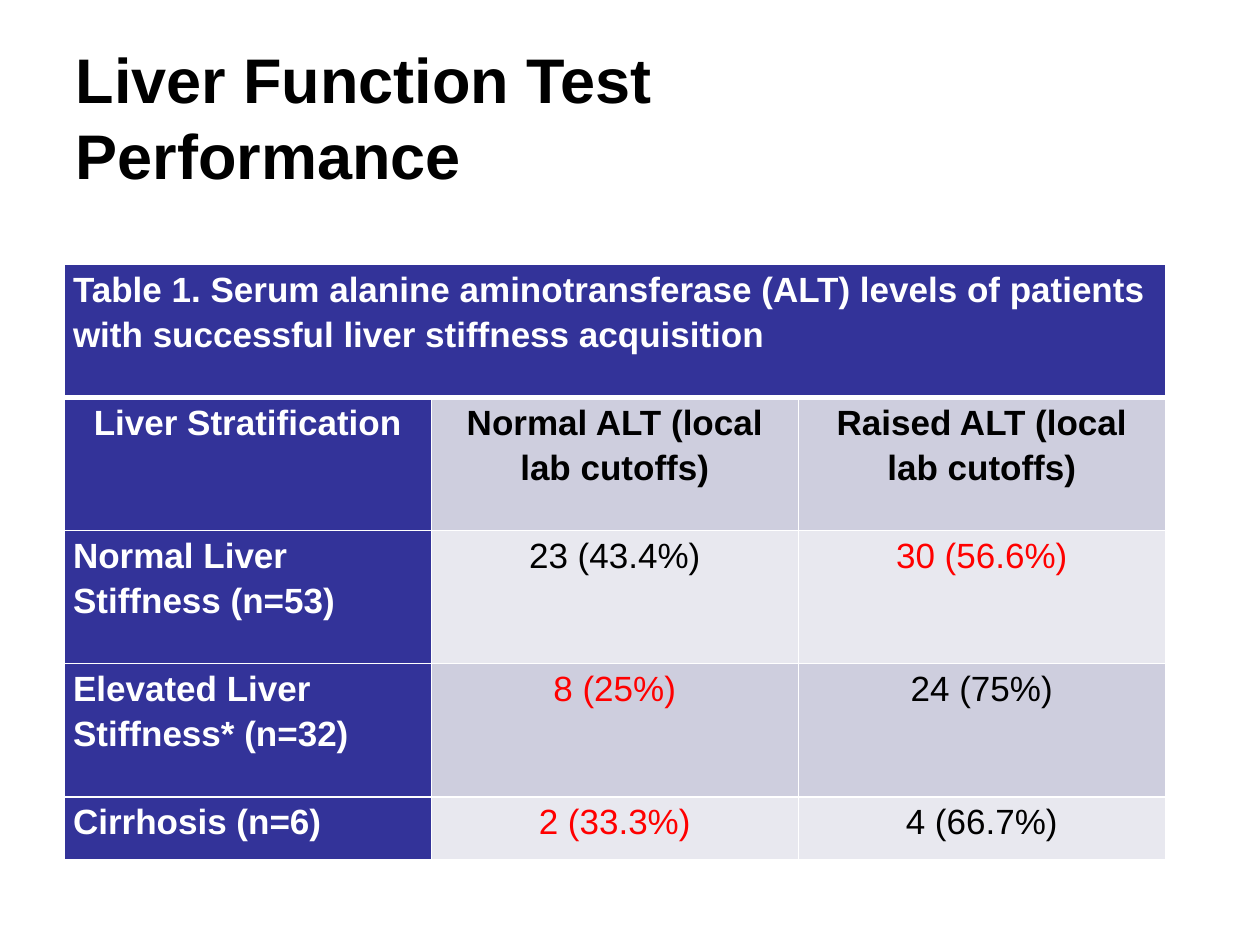
import pptx
import pptx.util
import pptx.dml.color
import pptx.enum.text
import lxml.etree

Inches, Pt = pptx.util.Inches, pptx.util.Pt
PP_ALIGN, MSO_ANCHOR = pptx.enum.text.PP_ALIGN, pptx.enum.text.MSO_ANCHOR
A = "http://schemas.openxmlformats.org/drawingml/2006/main"
WIDTH, HEIGHT = 10, 7.5
ROW_UNITS = [19, 19, 19, 19, 9]
NAVY, WHITE, BLACK, RED = "333399", "FFFFFF", "000000", "FF0000"
BANDS = ["E8E8EF", "CECEDE"]
CAPTION = ("Table 1. Serum alanine aminotransferase (ALT) levels of patients "
           "with successful liver stiffness acquisition")
ROWS = [
    [CAPTION, "", ""],
    ["Liver Stratification", "Normal ALT (local lab cutoffs)", "Raised ALT (local lab cutoffs)"],
    ["Normal Liver Stiffness (n=53)", "23 (43.4%)", "30 (56.6%)"],
    ["Elevated Liver Stiffness* (n=32)", "8 (25%)", "24 (75%)"],
    ["Cirrhosis (n=6)", "2 (33.3%)", "4 (66.7%)"],
]
DISCORDANT = {(2, 2), (3, 1), (4, 1)}


def rgb(color):
    return pptx.dml.color.RGBColor.from_string(color)


def add_run(p, text, size, color, bold):
    r = p.add_run()
    r.text = text
    r.font.name = "Arial"
    r.font.size = Pt(size)
    r.font.bold = bold
    r.font.color.rgb = rgb(color)


def set_borders(cell, widths):
    tc_pr = cell._tc.get_or_add_tcPr()
    for side, width in zip("LRTB", widths):
        ln = lxml.etree.SubElement(tc_pr, f"{{{A}}}ln{side}", w=str(Pt(width)))
        fill = lxml.etree.SubElement(ln, f"{{{A}}}solidFill")
        lxml.etree.SubElement(fill, f"{{{A}}}srgbClr", val=WHITE)


def format_cell(cell, row, col):
    header = row == 0 or col == 0
    set_borders(cell, [1, 1, 3 if row == 1 else 1, 3 if row == 0 else 1])
    cell.fill.solid()
    cell.fill.fore_color.rgb = rgb(NAVY if header else BANDS[row % 2])
    cell.margin_left = cell.margin_right = Inches(0.07)
    cell.margin_top = cell.margin_bottom = 0
    cell.vertical_anchor = MSO_ANCHOR.TOP
    text = ROWS[row][col]
    if not text:
        return
    p = cell.text_frame.paragraphs[0]
    p.alignment = PP_ALIGN.CENTER if row == 1 or col else PP_ALIGN.LEFT
    p.line_spacing = 1.15
    color = WHITE if header else RED if (row, col) in DISCORDANT else BLACK
    add_run(p, text, 20, color, header or row == 1)


def add_title(s, left, top, width, height):
    sp = s.shapes.title
    sp.left, sp.top, sp.width, sp.height = map(Inches, (left, top, width, height))
    tf = sp.text_frame
    tf.word_wrap = True
    tf.vertical_anchor = MSO_ANCHOR.MIDDLE
    p = tf.paragraphs[0]
    p.alignment = PP_ALIGN.LEFT
    add_run(p, "Liver Function Test ", 36, BLACK, True)
    p.add_line_break()
    add_run(p, "Performance", 36, BLACK, True)


def add_alt_table(s, left, top, width, height):
    box = map(Inches, (left, top, width, height))
    table = s.shapes.add_table(len(ROWS), len(ROWS[0]), *box).table
    for column in table.columns:
        column.width = Inches(width / len(ROWS[0]))
    for row, units in zip(table.rows, ROW_UNITS):
        row.height = Inches(height * units / sum(ROW_UNITS))
    table.cell(0, 0).merge(table.cell(0, len(ROWS[0]) - 1))
    for row, texts in enumerate(ROWS):
        for col in range(len(texts)):
            format_cell(table.cell(row, col), row, col)


def main():
    prs = pptx.Presentation()
    prs.slide_width, prs.slide_height = Inches(WIDTH), Inches(HEIGHT)
    s = prs.slides.add_slide(prs.slide_layouts[5])
    s.background.fill.solid()
    s.background.fill.fore_color.rgb = rgb(WHITE)
    add_title(s, 0.05 * WIDTH, 0.04 * HEIGHT, 0.9 * WIDTH, HEIGHT / 6)
    add_alt_table(s, 0.051 * WIDTH, 0.28 * HEIGHT, 0.874 * WIDTH, 0.63 * HEIGHT)
    prs.save("out.pptx")


if __name__ == "__main__":
    main()
